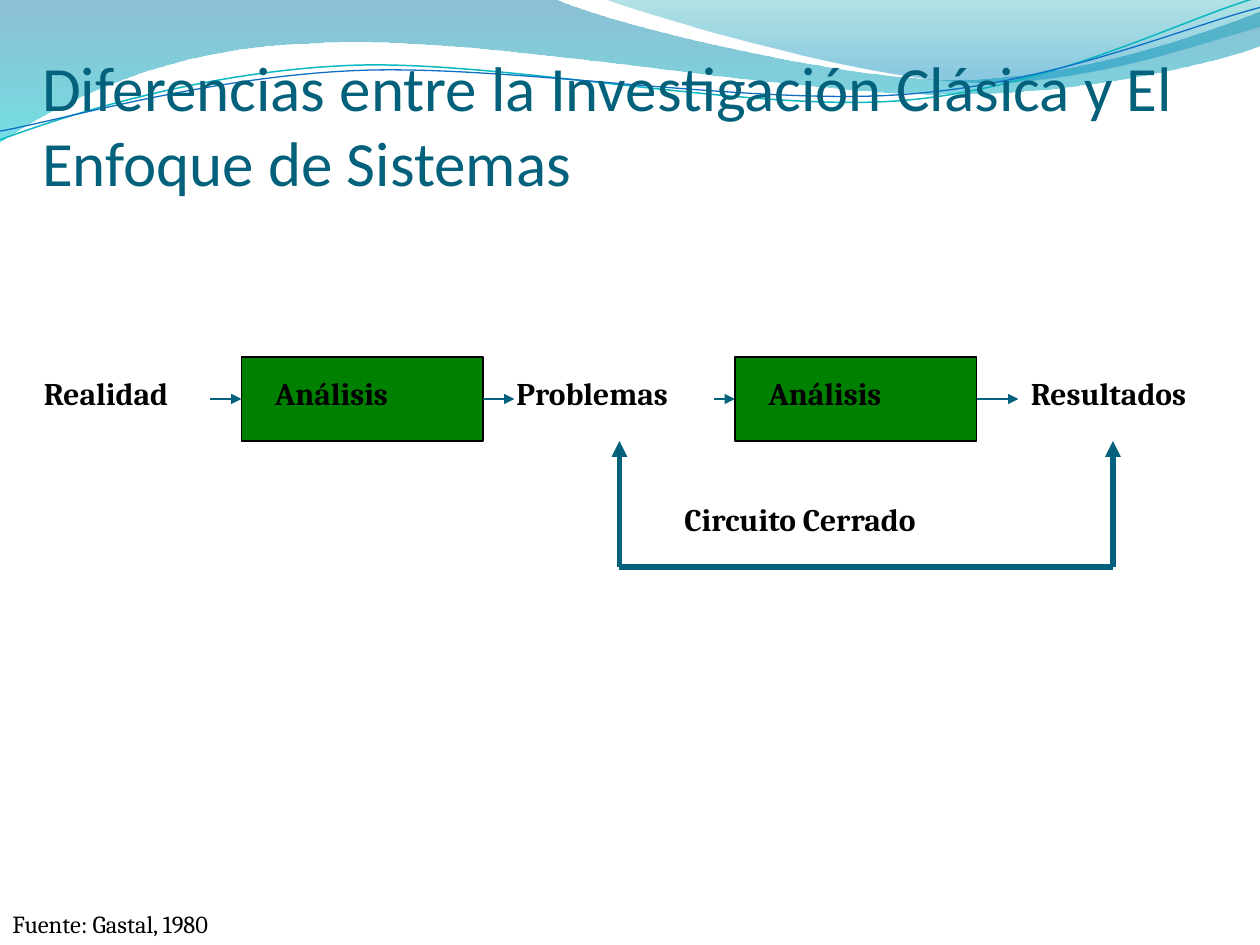
from dataclasses import dataclass
from math import cos, radians, sin
from typing import Optional

from lxml import etree
from pptx import Presentation
from pptx.dml.color import RGBColor
from pptx.enum.shapes import MSO_CONNECTOR, MSO_SHAPE
from pptx.enum.text import MSO_ANCHOR, MSO_AUTO_SIZE, PP_ALIGN
from pptx.oxml.ns import qn
from pptx.util import Pt

STRAIGHT = MSO_CONNECTOR.STRAIGHT
RECT = MSO_SHAPE.RECTANGLE
BOTTOM = MSO_ANCHOR.BOTTOM
NO_FIT = MSO_AUTO_SIZE.NONE
ALIGN_LEFT = PP_ALIGN.LEFT
LEFT, RIGHT = 1, 3
TILT = 2.7
COLORS = {
    "teal": "04617B", "green": "008000", "black": "000000",
    "sea": "0AB8BF", "blue": "0F6FC6",
    "deep": "0074A1", "aqua": "00C6CF", "mint": "00A1A9", "sky": "008BBF",
}


@dataclass
class Wave:
    """A start point, then steps: two numbers for a line, six for a curve."""
    start: tuple
    steps: list
    stops: tuple = ()  # (color, opacity in percent), from top to bottom
    line: str = ""
    width: float = 0
    hub: Optional[tuple] = None  # centre of a tilted wave


@dataclass
class Label:
    text: str
    x: float
    y: float
    w: float = 126
    h: float = 36
    size: float = 18
    bold: bool = True


@dataclass
class Link:
    start: tuple
    end: tuple
    width: float = 1
    arrow: bool = True
    source: Optional[int] = None  # index of the box it leaves
    target: Optional[int] = None  # index of the box it enters


WAVES = [
    Wave((0, 0), [
        (316.8, -0.7), (342.7, 12.2, 478.1, 45.4, 545.8, 45.4),
        (614.2, 45.4, 689.8, 18.7, 720, 6.5), (720.7, 25.9),
        (707.8, 31.7, 626.4, 54.7, 537.1, 54),
        (447.8, 54, 275, 20.2, 185, 24.5),
        (92.9, 25.9, 33.1, 59.8, -0.7, 81.4), (0, 0),
    ], stops=(("deep", 45), ("aqua", 55))),
    Wave((344.9, -0.7), [
        (366.5, 7.9, 491, 44.6, 553.7, 46.8),
        (616.3, 49.7, 691.9, 23, 720, 15.1), (720, 0), (344.9, -0.7),
    ], stops=(("mint", 30), ("sky", 45))),
    Wave((0, 79.9), [
        (34.6, 67, 113.8, 41, 199.4, 37.4),
        (284.4, 33.8, 427, 64.1, 513.4, 57.6),
        (599.8, 51.1, 675.4, 10.8, 718.6, -1.4),
    ], line="sea", width=0.85, hub=(359.3, 41.4)),
    Wave((0, 74.9), [
        (33.8, 69.1, 118.1, 43.9, 203.8, 40.3),
        (290.2, 36.7, 429.8, 60.5, 516.2, 54),
        (601.9, 48.2, 677.5, 15.1, 720, 4.3),
    ], line="blue", width=0.75, hub=(359.6, 42.5)),
]
BOX_XS = (138, 420)
BOX_Y, BOX_W, BOX_H = 204, 138, 48
MID = BOX_Y + BOX_H / 2
ROW = 210
LOOP_XS = (354, 636)
LOOP_Y = 324

LABELS = [
    Label("Análisis", 150, ROW),
    Label("Análisis", 432, ROW),
    Label("Realidad", 18, ROW),
    Label("Problemas", 288, ROW),
    Label("Resultados", 582, ROW, w=138),
    Label("Circuito Cerrado", 384, 282, w=228),
    Label("Fuente: Gastal, 1980", 0, 516, w=192, h=24, size=14, bold=False),
]
LINKS = [
    Link((120, MID), (138, MID), target=0),
    Link((276, MID), (294, MID), source=0),
    Link((408, MID), (420, MID), target=1),
    Link((558, MID), (582, MID), source=1),
    *[Link((x, LOOP_Y), (x, BOX_Y + BOX_H), width=3) for x in LOOP_XS],
    Link((LOOP_XS[0], LOOP_Y), (LOOP_XS[1], LOOP_Y), width=3, arrow=False),
]


def color(name: str) -> RGBColor:
    return RGBColor.from_string(COLORS[name])


def level(point: tuple, hub: Optional[tuple]) -> tuple:
    """Undo the tilt of a point, as the shape itself is rotated."""
    if hub is None:
        return point
    a, dx, dy = radians(TILT), point[0] - hub[0], point[1] - hub[1]
    return (hub[0] + dx * cos(a) - dy * sin(a),
            hub[1] + dx * sin(a) + dy * cos(a))


def bend(shape, steps: list) -> None:
    """Join each three line segments of a curved step into one curve."""
    lines = list(shape._element.iter(qn("a:lnTo")))
    for step in steps:
        group, lines = lines[:len(step) // 2], lines[len(step) // 2:]
        if len(group) == 3:
            curve = etree.Element(qn("a:cubicBezTo"))
            group[0].addprevious(curve)
            for line in group:
                curve.append(line[0])
                line.getparent().remove(line)


def draw_wave(shapes, wave: Wave) -> None:
    points = [wave.start] + [step[i:i + 2] for step in wave.steps
                             for i in range(0, len(step), 2)]
    points = [(Pt(x), Pt(y)) for x, y in
              (level(point, wave.hub) for point in points)]
    pen = shapes.build_freeform(*points[0])
    pen.add_line_segments(points[1:], close=bool(wave.stops))
    shape = pen.convert_to_shape()
    bend(shape, wave.steps)
    shape.shadow.inherit = False
    if not wave.stops:
        shape.rotation = 360 - TILT
        shape.fill.background()
        shape.line.color.rgb = color(wave.line)
        shape.line.width = Pt(wave.width)
        return
    shape.line.fill.background()
    shape.fill.gradient()
    shape.fill.gradient_angle = 270
    for i, (name, _) in enumerate(wave.stops):
        stop = shape.fill.gradient_stops[i]
        stop.position = 0.8 if name == "sky" else i
        stop.color.rgb = color(name)
    tints = shape._element.spPr.iter(qn("a:srgbClr"))
    for tint, (_, share) in zip(list(tints), wave.stops):
        etree.SubElement(tint, qn("a:alpha"), val=str(share * 1000))


def draw_box(shapes, x: float):
    box = shapes.add_shape(RECT, Pt(x), Pt(BOX_Y), Pt(BOX_W), Pt(BOX_H))
    box.shadow.inherit = False
    box.fill.solid()
    box.fill.fore_color.rgb = color("green")
    box.line.color.rgb = color("black")
    box.line.width = Pt(1)
    return box


def draw_label(shapes, label: Label) -> None:
    box = shapes.add_textbox(Pt(label.x), Pt(label.y), Pt(label.w), Pt(label.h))
    frame = box.text_frame
    frame.word_wrap = True
    frame.text = label.text
    font = frame.paragraphs[0].font
    font.name, font.size, font.bold = "Cambria", Pt(label.size), label.bold
    font.color.rgb = color("black")


def draw_link(shapes, link: Link, boxes: list) -> None:
    line = shapes.add_connector(
        STRAIGHT, *[Pt(v) for v in (*link.start, *link.end)])
    if link.source is not None:
        line.begin_connect(boxes[link.source], RIGHT)
    if link.target is not None:
        line.end_connect(boxes[link.target], LEFT)
    line.line.color.rgb = color("teal")
    line.line.width = Pt(link.width)
    if link.arrow:
        etree.SubElement(line.line._get_or_add_ln(), qn("a:tailEnd"),
                         type="triangle")
    etree.SubElement(line._element.spPr, qn("a:effectLst"))


def set_title(shapes, text: str) -> None:
    title = shapes.title
    title.left, title.top, title.width, title.height = map(
        Pt, (24, 18, 666, 96))
    frame = title.text_frame
    frame.text = text
    frame.word_wrap, frame.auto_size = True, NO_FIT
    frame.vertical_anchor = BOTTOM
    frame.margin_left = frame.margin_right = frame.margin_bottom = 0
    frame.margin_top = Pt(3.6)
    para = frame.paragraphs[0]
    para.alignment = ALIGN_LEFT
    para.font.name, para.font.size = "Calibri", Pt(36)
    para.font.color.rgb = color("teal")
    shapes._spTree.append(title._element)  # in front of the waves


deck = Presentation()
deck.slide_width, deck.slide_height = Pt(720), Pt(540)
shapes = deck.slides.add_slide(deck.slide_layouts[5]).shapes
for wave in WAVES:
    draw_wave(shapes, wave)
set_title(shapes, "Diferencias entre la Investigación Clásica "
                  "y El Enfoque de Sistemas")
boxes = [draw_box(shapes, x) for x in BOX_XS]
for label in LABELS:
    draw_label(shapes, label)
for link in LINKS:
    draw_link(shapes, link, boxes)
deck.save("out.pptx")
